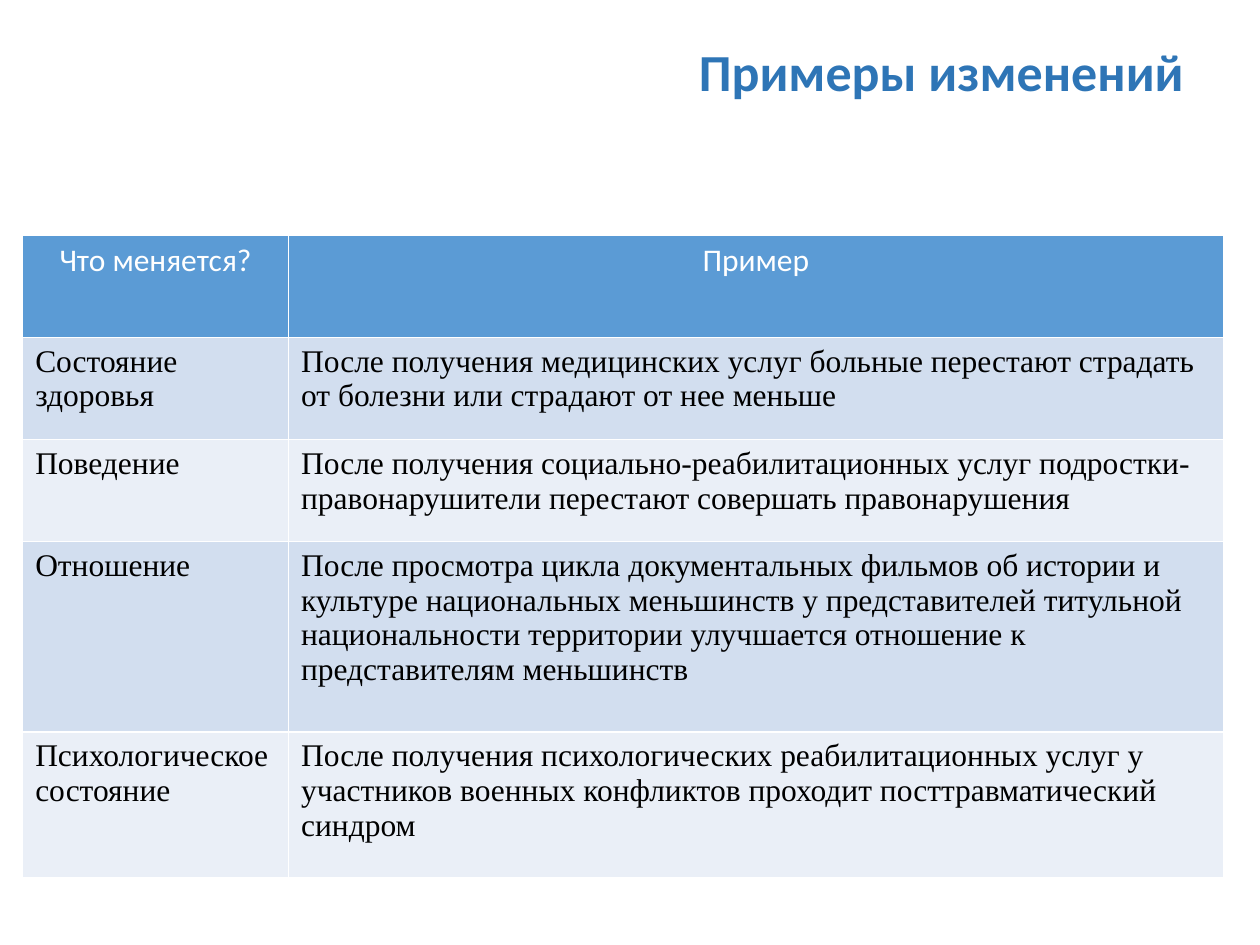
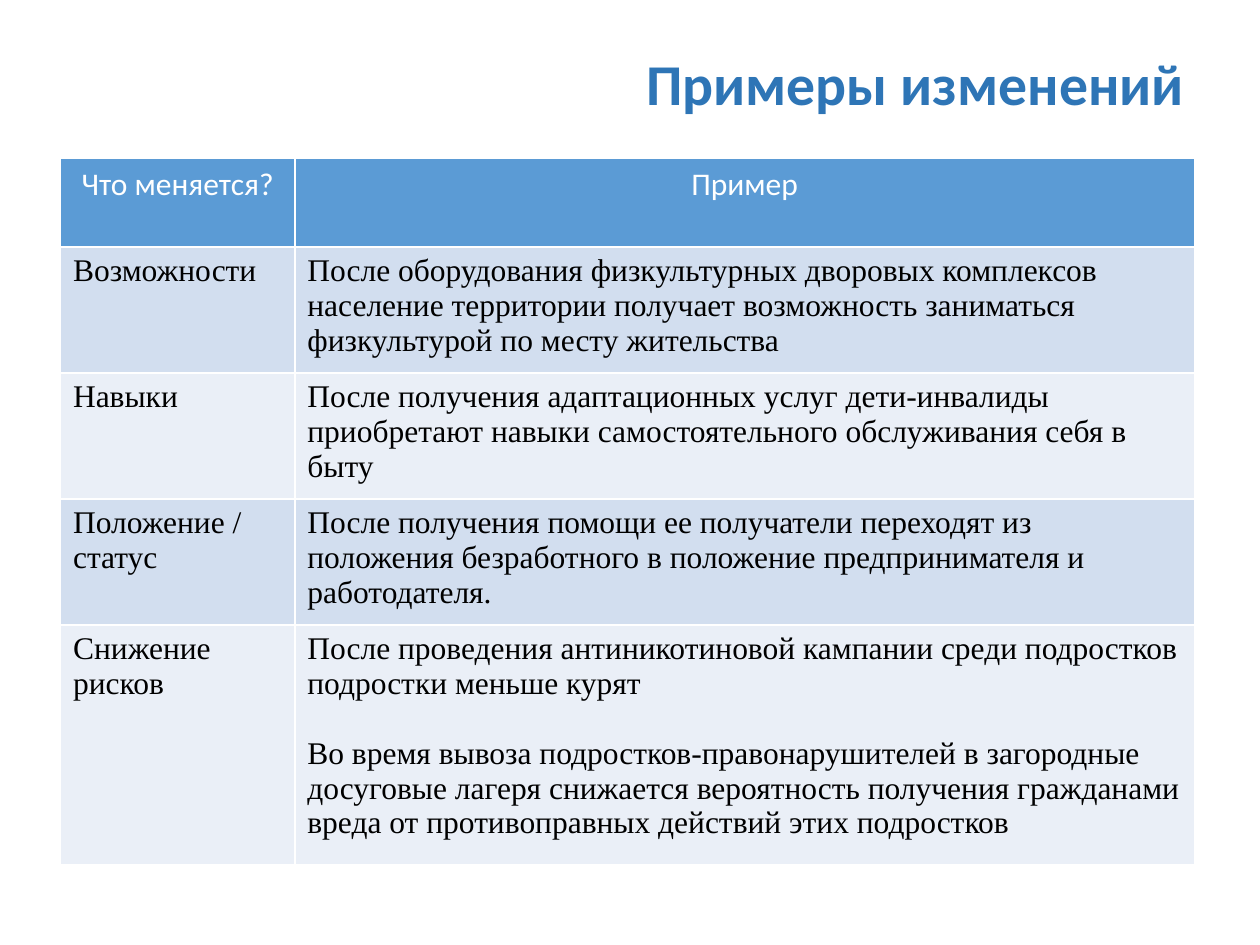
"""Builds two slides with tables of examples of change."""
from pptx import Presentation, util as u
from pptx.dml.color import RGBColor
from pptx.enum import text as t
from pptx.oxml import parse_xml
from pptx.oxml.ns import nsdecls

BLUE = RGBColor(0x2E, 0x75, 0xB6)
HEAD = RGBColor(0x5B, 0x9B, 0xD5)
BANDS = [RGBColor(0xD2, 0xDE, 0xEF), RGBColor(0xEA, 0xEF, 0xF7)]
WHITE = RGBColor(0xFF, 0xFF, 0xFF)
BLACK = RGBColor(0, 0, 0)
SANS, SERIF = "Calibri", "Times New Roman"
SIZE = 18
GAP = 20

TITLE = "Примеры изменений"
HEADS = ("Что меняется?", "Пример")
SLIDES = [
    dict(size=29.7, high=0.58, left=0.18, top=1.87,
         cols=(2.11, 7.42), rows=(0.81, 0.81, 0.81, 1.51, 1.16), cells=[
             (["Состояние", "здоровья"],
              ["После получения медицинских услуг больные перестают страдать "
               "от болезни или страдают от нее меньше"]),
             (["Поведение"],
              ["После получения социально-реабилитационных услуг "
               "подростки-правонарушители перестают совершать правонарушения"]),
             (["Отношение"],
              ["После просмотра цикла документальных фильмов об истории и "
               "культуре национальных меньшинств у представителей титульной "
               "национальности территории улучшается отношение к "
               "представителям меньшинств"]),
             (["Психологическое", "состояние"],
              ["После получения психологических реабилитационных услуг у "
               "участников военных конфликтов проходит посттравматический "
               "синдром"]),
         ]),
    dict(size=33, high=0.78, left=0.48, top=1.26,
         cols=(1.86, 7.14), rows=(0.7, 1, 1, 1, 1.9), cells=[
             (["Возможности"],
              ["После оборудования физкультурных дворовых комплексов население "
               "территории получает возможность заниматься физкультурой по "
               "месту жительства"]),
             (["Навыки"],
              ["После получения адаптационных услуг дети-инвалиды приобретают "
               "навыки самостоятельного обслуживания себя в быту"]),
             (["Положение / статус"],
              ["После получения помощи ее получатели переходят из положения "
               "безработного в положение предпринимателя и работодателя."]),
             (["Снижение рисков"],
              ["После проведения антиникотиновой кампании среди подростков "
               "подростки меньше курят",
               "Во время вывоза подростков-правонарушителей в загородные "
               "досуговые лагеря снижается вероятность получения гражданами "
               "вреда от противоправных действий этих подростков"]),
         ]),
]


def write(frame, lines, font=SERIF, size=SIZE, color=BLACK, bold=False,
          align=t.PP_ALIGN.LEFT, space=None, gap=0):
    for i, line in enumerate(lines):
        para = frame.paragraphs[0] if i == 0 else frame.add_paragraph()
        para.alignment = align
        para.line_spacing = space
        if i:
            para.space_before = u.Pt(gap)
        run = para.add_run()
        run.text = line
        run.font.name, run.font.size = font, u.Pt(size)
        run.font.bold, run.font.color.rgb = bold, color


def paint(cell, color):
    props = cell._tc.get_or_add_tcPr()
    for side in "LRTB":
        props.append(parse_xml(
            f'<a:ln{side} {nsdecls("a")} w="{u.Pt(1)}"><a:solidFill>'
            f'<a:srgbClr val="{WHITE}"/></a:solidFill></a:ln{side}>'))
    cell.fill.solid()
    cell.fill.fore_color.rgb = color


def add_title(slide, size, high):
    box = slide.shapes.title
    box.left, box.top = u.Inches(0.5), u.Inches(0.3)
    box.width, box.height = u.Inches(9), u.Inches(high)
    frame = box.text_frame
    frame.auto_size = t.MSO_AUTO_SIZE.NONE
    frame.vertical_anchor = t.MSO_ANCHOR.MIDDLE
    write(frame, [TITLE], font=SANS, size=size, color=BLUE, bold=True,
          align=t.PP_ALIGN.RIGHT, space=0.9)


def add_grid(slide, left, top, cols, rows, cells):
    table = slide.shapes.add_table(
        len(rows), len(cols), u.Inches(left), u.Inches(top),
        u.Inches(sum(cols)), u.Inches(sum(rows))).table
    for col, wide in zip(table.columns, cols):
        col.width = u.Inches(wide)
    for row, high in zip(table.rows, rows):
        row.height = u.Inches(high)
    for c, name in enumerate(HEADS):
        cell = table.cell(0, c)
        paint(cell, HEAD)
        write(cell.text_frame, [name], font=SANS, color=WHITE,
              align=t.PP_ALIGN.CENTER)
    for r, pair in enumerate(cells):
        for c, lines in enumerate(pair):
            cell = table.cell(r + 1, c)
            paint(cell, BANDS[r % 2])
            write(cell.text_frame, lines, gap=GAP * c)


def main():
    deck = Presentation()
    deck.slide_width, deck.slide_height = u.Inches(10), u.Inches(7.5)
    for data in SLIDES:
        slide = deck.slides.add_slide(deck.slide_layouts[5])
        add_title(slide, data["size"], data["high"])
        add_grid(slide, *(data[k] for k in
                          ("left", "top", "cols", "rows", "cells")))
    deck.save("out.pptx")


if __name__ == "__main__":
    main()
